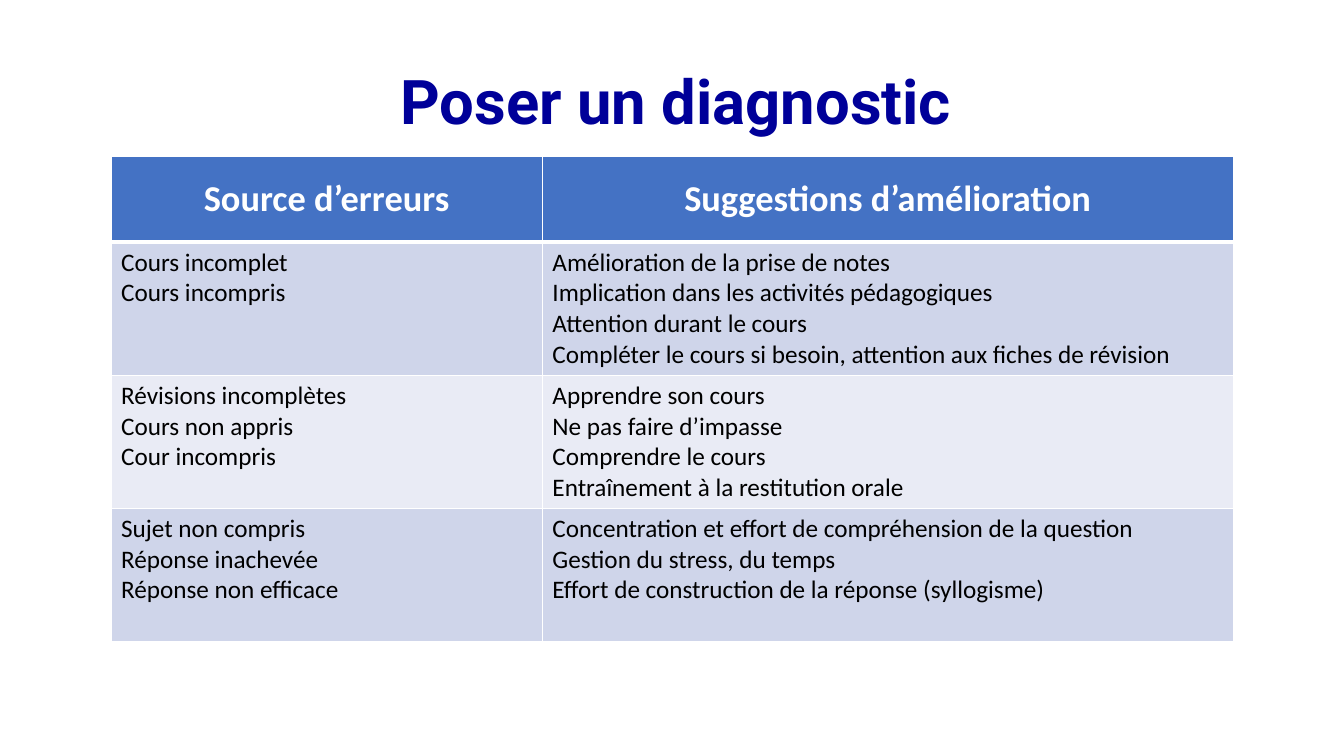
from dataclasses import dataclass

from lxml.etree import SubElement
from pptx import Presentation
from pptx.dml.color import RGBColor
from pptx.enum.text import MSO_ANCHOR, MSO_AUTO_SIZE, PP_ALIGN
from pptx.oxml.ns import qn
from pptx.util import Cm, Pt


@dataclass(frozen=True)
class Theme:
    title_font: str = "Roboto"
    font: str = "Calibri"
    navy: str = "000099"
    blue: str = "4472C4"
    bands: tuple = ("CFD5EA", "E9EBF5")
    white: str = "FFFFFF"
    black: str = "000000"
    title_size: int = 44
    head_size: int = 26
    text_size: int = 18
    thin: int = 1
    thick: int = 3


HEADS = ["Source d’erreurs", "Suggestions d’amélioration"]
ROWS = [
    ["Cours incomplet\nCours incompris",
     "Amélioration de la prise de notes\n"
     "Implication dans les activités pédagogiques\n"
     "Attention durant le cours\n"
     "Compléter le cours si besoin, attention aux fiches de révision"],
    ["Révisions incomplètes\nCours non appris\nCour incompris",
     "Apprendre son cours\n"
     "Ne pas faire d’impasse\n"
     "Comprendre le cours\n"
     "Entraînement à la restitution orale"],
    ["Sujet non compris\nRéponse inachevée\nRéponse non efficace",
     "Concentration et effort de compréhension de la question\n"
     "Gestion du stress, du temps\n"
     "Effort de construction de la réponse (syllogisme)"],
]
WIDTHS = [10.87, 17.42]
HEAD_HIGH, ROW_HIGH = 2.16, 3.35


class Deck:
    def __init__(self, theme):
        self.theme = theme
        self.prs = Presentation()
        self.prs.slide_width, self.prs.slide_height = Cm(33.87), Cm(19.05)
        self.slide = self.prs.slides.add_slide(self.prs.slide_layouts[5])

    def style(self, frame, name, size, color, bold=False, align=PP_ALIGN.LEFT):
        for para in frame.paragraphs:
            para.alignment = align
            font = para.font
            font.name, font.size, font.bold = name, Pt(size), bold
            font.color.rgb = RGBColor.from_string(color)

    def title(self, text, left, top, width, height):
        look = self.theme
        shape = self.slide.shapes.title
        shape.left, shape.top = Cm(left), Cm(top)
        shape.width, shape.height = Cm(width), Cm(height)
        frame = shape.text_frame
        frame.text = text
        frame.auto_size = MSO_AUTO_SIZE.NONE
        frame.vertical_anchor = MSO_ANCHOR.TOP
        para = frame.paragraphs[0]
        para.line_spacing, para.space_before = 0.9, Pt(10)
        self.style(frame, look.title_font, look.title_size, look.navy,
                   True, PP_ALIGN.CENTER)

    def edge(self, cell, top, bottom):
        """Draw the four borders; top and bottom are widths in points."""
        look = self.theme
        props = cell._tc.get_or_add_tcPr()
        sides = {"L": look.thin, "R": look.thin, "T": top, "B": bottom}
        for spot, (side, width) in enumerate(sides.items()):
            line = SubElement(props, qn(f"a:ln{side}"), w=str(Pt(width)))
            fill = SubElement(line, qn("a:solidFill"))
            SubElement(fill, qn("a:srgbClr"), val=look.white)
            props.insert(spot, line)

    def cell(self, cell, text, row):
        look = self.theme
        head = row == 0
        cell.text = text
        cell.fill.solid()
        tint = look.blue if head else look.bands[(row - 1) % 2]
        cell.fill.fore_color.rgb = RGBColor.from_string(tint)
        if head:
            cell.vertical_anchor = MSO_ANCHOR.MIDDLE
            self.style(cell.text_frame, look.font, look.head_size,
                       look.white, True, PP_ALIGN.CENTER)
        else:
            self.style(cell.text_frame, look.font, look.text_size, look.black)
        self.edge(cell, look.thick if row == 1 else look.thin,
                  look.thick if head else look.thin)

    def table(self, heads, rows, left, top, widths):
        lines = [heads, *rows]
        highs = [HEAD_HIGH] + [ROW_HIGH] * len(rows)
        grid = self.slide.shapes.add_table(
            len(lines), len(heads), Cm(left), Cm(top),
            Cm(sum(widths)), Cm(sum(highs))).table
        for col, width in zip(grid.columns, widths):
            col.width = Cm(width)
        for row, (line, high) in enumerate(zip(lines, highs)):
            grid.rows[row].height = Cm(high)
            for col, text in enumerate(line):
                self.cell(grid.cell(row, col), text, row)


def main():
    deck = Deck(Theme())
    deck.title("Poser un diagnostic", 2.34, 1.68, 29.4, 15.98)
    deck.table(HEADS, ROWS, 2.8, 3.94, WIDTHS)
    deck.prs.save("out.pptx")


if __name__ == "__main__":
    main()
